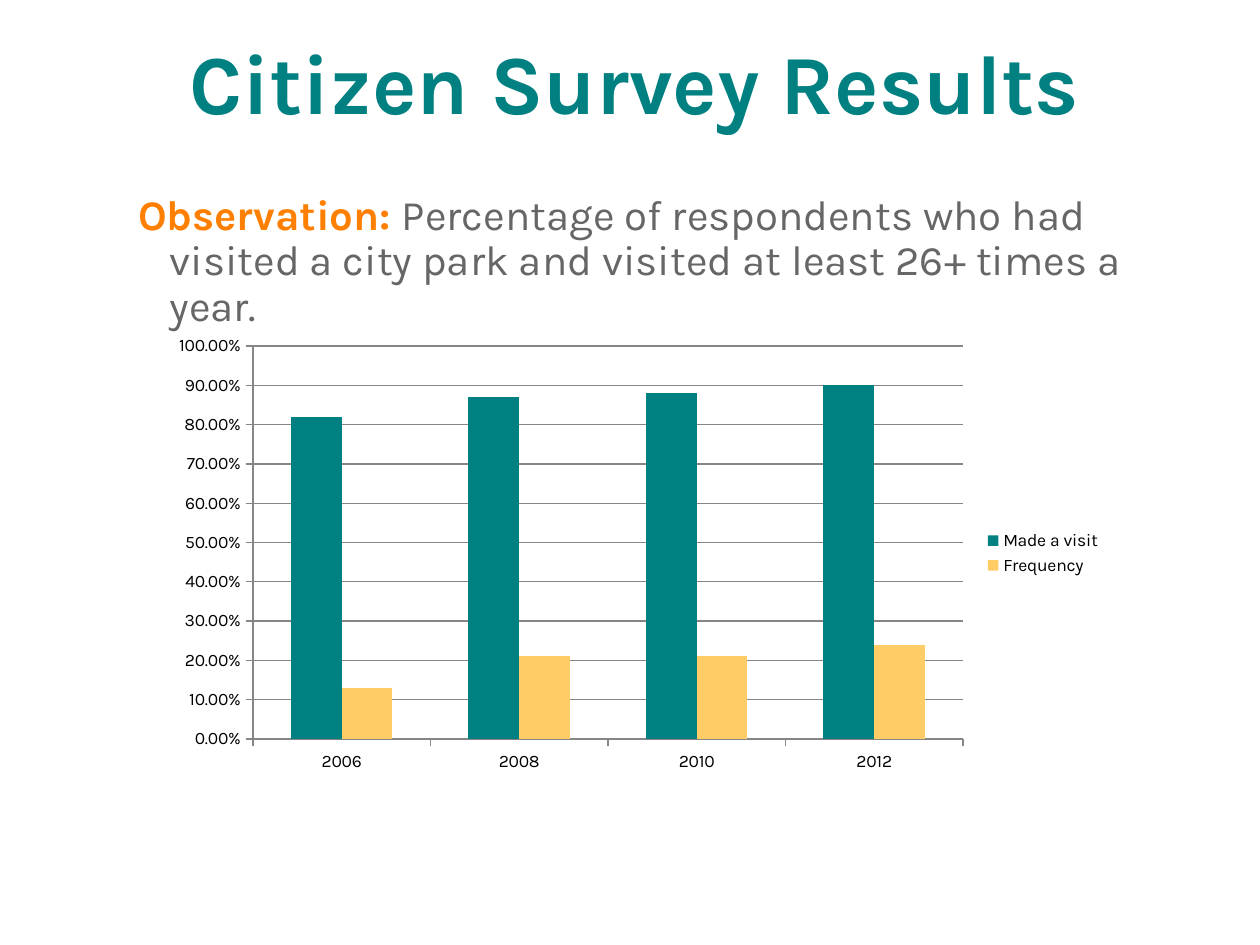
from dataclasses import dataclass

from pptx import Presentation
from pptx.chart.data import CategoryChartData
from pptx.dml.color import RGBColor
from pptx.enum.chart import XL_CHART_TYPE, XL_LEGEND_POSITION, XL_TICK_MARK
from pptx.enum.text import MSO_ANCHOR, MSO_AUTO_SIZE, PP_ALIGN
from pptx.oxml import parse_xml
from pptx.oxml.ns import nsdecls
from pptx.util import Emu, Inches, Pt

COLUMN = XL_CHART_TYPE.COLUMN_CLUSTERED
RIGHT = XL_LEGEND_POSITION.RIGHT
OUT = XL_TICK_MARK.OUTSIDE
TOP, FIXED = MSO_ANCHOR.TOP, MSO_AUTO_SIZE.NONE
LEFT, CENTER = PP_ALIGN.LEFT, PP_ALIGN.CENTER


@dataclass(frozen=True)
class Theme:
    font: str = "Karla"
    teal: str = "008080"
    orange: str = "FF8000"
    gray: str = "666666"
    gold: str = "FFCC66"
    black: str = "000000"
    line: str = "868686"
    title: int = 48
    body: int = 24
    label: int = 10


THEME = Theme()

# Content: runs are (text, color, bold)
TITLE = [("Citizen Survey Results", THEME.teal, True)]
BODY = [
    ("Observation: ", THEME.orange, True),
    ("Percentage of respondents who had visited a city park "
     "and visited at least 26+ times a year.", THEME.gray, False),
]
YEARS = ["2006", "2008", "2010", "2012"]
SERIES = [
    ("Made a visit", [0.82, 0.87, 0.88, 0.9], THEME.teal),
    ("Frequency", [0.13, 0.21, 0.21, 0.24], THEME.gold),
]

# Places in px: left, top, width, height
TITLE_BOX = (175, 18, 919, 164)
BODY_BOX = (125, 183, 1023, 159)
CHART_BOX = (160, 326, 954, 454)
PLOT_BOX = (253, 346, 710, 393)


def px(n):
    return Emu(round(n * 914400 / 126))


def rgb(code):
    return RGBColor.from_string(code)


def fill_text(shape, box, runs, size, align, inset):
    shape.left, shape.top, shape.width, shape.height = map(px, box)
    frame = shape.text_frame
    frame.word_wrap, frame.auto_size = True, FIXED
    frame.vertical_anchor = TOP
    frame.margin_left = frame.margin_right = px(13)
    frame.margin_top = frame.margin_bottom = px(inset)
    para = frame.paragraphs[0]
    para.alignment = align
    for text, color, bold in runs:
        run = para.add_run()
        run.text = text
        font = run.font
        font.name, font.size, font.bold = THEME.font, Pt(size), bold
        font.color.rgb = rgb(color)
    return para


def place_plot(chart):
    left, top, wide, high = CHART_BOX
    x, y, w, h = PLOT_BOX
    parts = {"x": (x - left) / wide, "y": (y - top) / high,
             "w": w / wide, "h": h / high}
    modes = "".join(f'<c:{k}Mode val="edge"/>' for k in "xy")
    sizes = "".join(f'<c:{k} val="{v:.4f}"/>' for k, v in parts.items())
    area = chart.plots[0]._element.getparent()
    for old in area.findall("{*}layout"):
        area.remove(old)
    area.insert(0, parse_xml(
        f'<c:layout {nsdecls("c")}><c:manualLayout>'
        f'<c:layoutTarget val="inner"/>{modes}{sizes}'
        '</c:manualLayout></c:layout>'))


def add_survey(slide):
    data = CategoryChartData(number_format="0.00%")
    data.categories = YEARS
    for name, vals, _ in SERIES:
        data.add_series(name, vals)
    chart = slide.shapes.add_chart(COLUMN, *map(px, CHART_BOX), data).chart
    chart.has_title = False
    chart.font.name, chart.font.size = THEME.font, Pt(THEME.label)
    chart.font.color.rgb = rgb(THEME.black)

    # Columns
    plot = chart.plots[0]
    plot.gap_width, plot.overlap, plot.vary_by_categories = 150, 0, False
    for series, (_, _, color) in zip(plot.series, SERIES):
        series.format.fill.solid()
        series.format.fill.fore_color.rgb = rgb(color)

    # Axes and grid
    value, cat = chart.value_axis, chart.category_axis
    value.minimum_scale, value.maximum_scale, value.major_unit = 0, 1, 0.1
    value.has_major_gridlines = True
    value.tick_labels.number_format = "0.00%"
    value.tick_labels.number_format_is_linked = False
    for axis in (value, cat):
        axis.major_tick_mark = OUT
    for part in (value, cat, value.major_gridlines):
        part.format.line.color.rgb = rgb(THEME.line)
        part.format.line.width = Pt(0.75)

    # Legend
    chart.has_legend = True
    chart.legend.position = RIGHT
    chart.legend.include_in_layout = False
    place_plot(chart)


def main():
    deck = Presentation()
    deck.slide_width, deck.slide_height = Inches(10), Inches(7.5)
    slide = deck.slides.add_slide(deck.slide_layouts[1])
    title, body = slide.placeholders

    # Title and observation
    fill_text(title, TITLE_BOX, TITLE, THEME.title, CENTER, 13)
    para = fill_text(body, BODY_BOX, BODY, THEME.body, LEFT, 11)
    para.line_spacing, para.space_before = 0.9, Pt(0)
    props = para._p.get_or_add_pPr()
    props.set("marL", str(Inches(0.25)))
    props.set("indent", str(Inches(-0.25)))
    props.append(parse_xml(f'<a:buNone {nsdecls("a")}/>'))

    add_survey(slide)
    deck.save("out.pptx")


if __name__ == "__main__":
    main()
